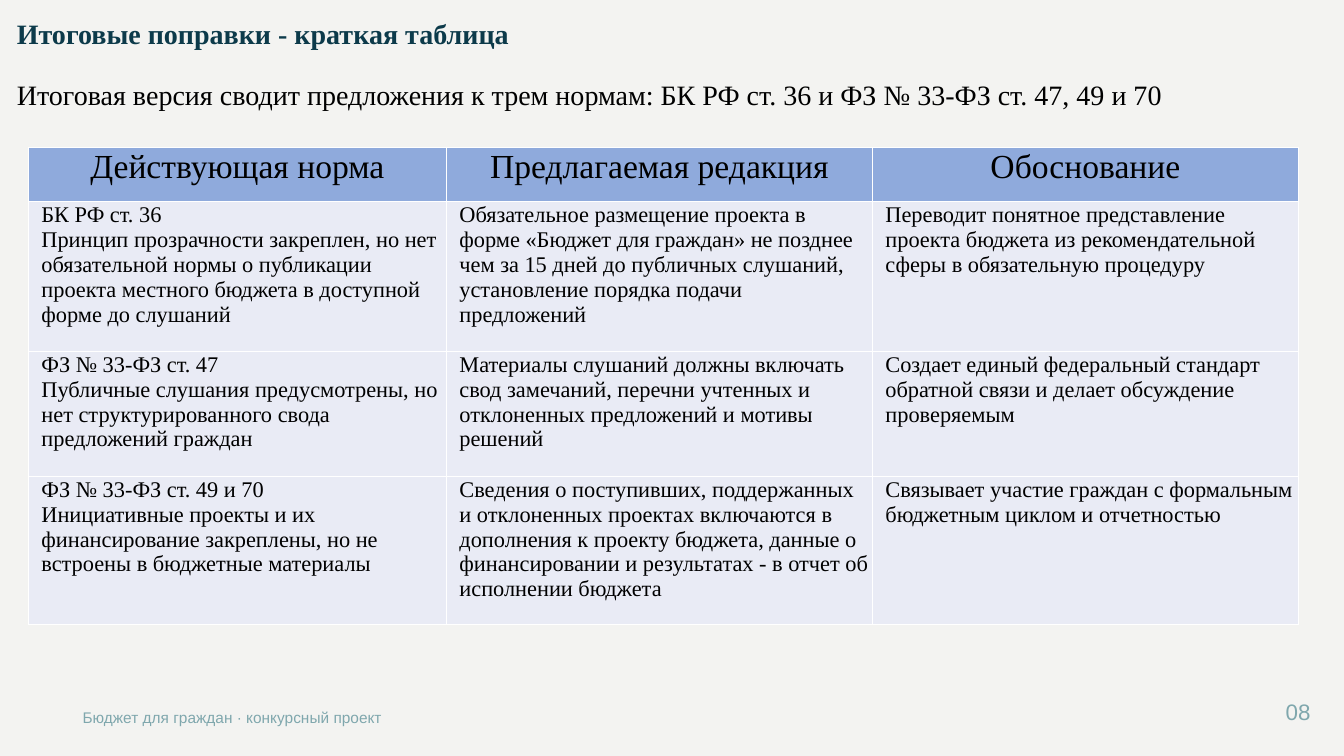
from lxml import etree
from pptx import Presentation
from pptx.dml.color import RGBColor
from pptx.enum.text import MSO_ANCHOR, PP_ALIGN
from pptx.oxml.ns import qn
from pptx.util import Pt

LEFT, CENTER, RIGHT = PP_ALIGN.LEFT, PP_ALIGN.CENTER, PP_ALIGN.RIGHT
MIDDLE = MSO_ANCHOR.MIDDLE
SERIF, SANS = "Times New Roman", "Arial"
COLORS = {
    "background": "F3F3F1",
    "title": "0C3A4A",
    "text": "000000",
    "footer": "7FA7AD",
    "header": "8FAADC",
    "body": "E9EBF5",
    "border": "FFFFFF",
}

COLUMN_WIDTHS = [298.6, 304.3, 304.3]
ROW_HEIGHTS = [38.5, 107, 89.3, 105.8]
ROWS = [
    ["Действующая норма", "Предлагаемая редакция", "Обоснование"],
    [
        "БК РФ ст. 36\nПринцип прозрачности закреплен, но нет обязательной нормы "
        "о публикации проекта местного бюджета в доступной форме до слушаний",
        "Обязательное размещение проекта в форме «Бюджет для граждан» не позднее "
        "чем за 15 дней до публичных слушаний, установление порядка подачи предложений",
        "Переводит понятное представление проекта бюджета из рекомендательной "
        "сферы в обязательную процедуру",
    ],
    [
        "ФЗ № 33-ФЗ ст. 47\nПубличные слушания предусмотрены, но нет "
        "структурированного свода предложений граждан",
        "Материалы слушаний должны включать свод замечаний, перечни учтенных и "
        "отклоненных предложений и мотивы решений",
        "Создает единый федеральный стандарт обратной связи и делает обсуждение "
        "проверяемым",
    ],
    [
        "ФЗ № 33-ФЗ ст. 49 и 70\nИнициативные проекты и их финансирование "
        "закреплены, но не встроены в бюджетные материалы",
        "Сведения о поступивших, поддержанных и отклоненных проектах включаются в "
        "дополнения к проекту бюджета, данные о финансировании и результатах - в "
        "отчет об исполнении бюджета",
        "Связывает участие граждан с формальным бюджетным циклом и отчетностью",
    ],
]


def rgb(name):
    return RGBColor.from_string(COLORS[name])


def write(tf, text, size, color, font=SERIF, bold=False, align=LEFT):
    """Fill a text frame, one paragraph per line of text."""
    tf.text = text
    for p in tf.paragraphs:
        p.alignment = align
        p.font.name = font
        p.font.size = Pt(size)
        p.font.bold = bold
        p.font.color.rgb = rgb(color)


def add_text(s, box, text, size, color, **style):
    tf = s.shapes.add_textbox(*map(Pt, box)).text_frame
    tf.word_wrap = True
    tf.vertical_anchor = MIDDLE
    tf.margin_left = tf.margin_right = tf.margin_top = tf.margin_bottom = 0
    write(tf, text, size, color, **style)


def add_borders(cell):
    tcPr = cell._tc.get_or_add_tcPr()
    for i, side in enumerate(("a:lnL", "a:lnR", "a:lnT", "a:lnB")):
        ln = etree.Element(qn(side), w=str(Pt(1)))
        fill = etree.SubElement(ln, qn("a:solidFill"))
        etree.SubElement(fill, qn("a:srgbClr"), val=COLORS["border"])
        tcPr.insert(i, ln)


def fill_cell(cell, text, is_header):
    cell.margin_left = Pt(0.7 if is_header else 9.3)
    cell.margin_right = cell.margin_top = Pt(0.7)
    cell.margin_bottom = 0
    cell.fill.solid()
    cell.fill.fore_color.rgb = rgb("header" if is_header else "body")
    add_borders(cell)
    write(cell.text_frame, text, 24 if is_header else 16, "text",
          align=CENTER if is_header else LEFT)


def add_amendments_table(s, left, top):
    table = s.shapes.add_table(
        len(ROWS), len(COLUMN_WIDTHS), Pt(left), Pt(top),
        Pt(sum(COLUMN_WIDTHS)), Pt(sum(ROW_HEIGHTS))).table
    for column, width in zip(table.columns, COLUMN_WIDTHS):
        column.width = Pt(width)
    for r, (row, height) in enumerate(zip(ROWS, ROW_HEIGHTS)):
        table.rows[r].height = Pt(height)
        for c, text in enumerate(row):
            fill_cell(table.cell(r, c), text, r == 0)


def main():
    prs = Presentation()
    prs.slide_width, prs.slide_height = Pt(960), Pt(540)
    s = prs.slides.add_slide(prs.slide_layouts[6])
    s.background.fill.solid()
    s.background.fill.fore_color.rgb = rgb("background")

    add_text(s, (12, 11, 547, 25), "Итоговые поправки - краткая таблица",
             20, "title", bold=True)
    add_text(s, (12, 46, 891, 42.5),
             "Итоговая версия сводит предложения к трем нормам: "
             "БК РФ ст. 36 и ФЗ № 33-ФЗ ст. 47, 49 и 70", 20, "text")
    add_amendments_table(s, 20.3, 105.5)
    add_text(s, (59, 504, 259, 17.3), "Бюджет для граждан · конкурсный проект",
             11, "footer", font=SANS)
    add_text(s, (903.6, 498.4, 32.4, 20), "08", 16, "footer", font=SANS, align=RIGHT)

    prs.save("out.pptx")


if __name__ == "__main__":
    main()
